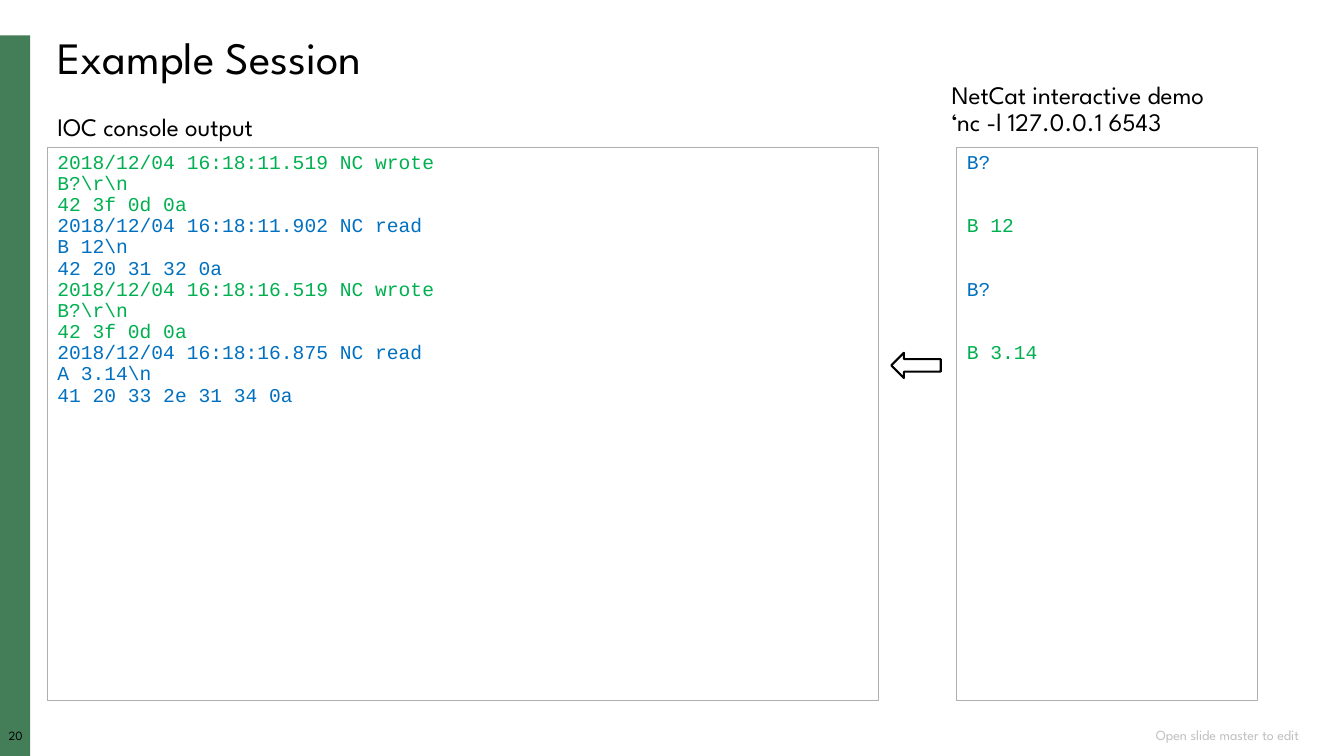
from pptx import Presentation
from pptx.dml.color import RGBColor
from pptx.enum.shapes import MSO_SHAPE
from pptx.enum.text import MSO_ANCHOR, PP_ALIGN
from pptx.util import Inches, Pt

RECTANGLE, LEFT_ARROW = MSO_SHAPE.RECTANGLE, MSO_SHAPE.LEFT_ARROW
TOP, MIDDLE = MSO_ANCHOR.TOP, MSO_ANCHOR.MIDDLE
LEFT, CENTER, RIGHT = PP_ALIGN.LEFT, PP_ALIGN.CENTER, PP_ALIGN.RIGHT

HEADING_FONT, CODE_FONT = "League Spartan", "Courier New"
BLACK, GREY, BORDER = "000000", "BFBFBF", "AEB0AF"
SIDEBAR, GREEN, BLUE = "447E59", "00B050", "0070C0"

LEFT_EDGE = 0.47
PANEL_TOP, PANEL_HEIGHT = 1.46, 5.49
LINE_PITCH = 15.15  # points between console lines


def add_box(preset, left, top, width, height, fill=None, line=None, line_width=0.75):
    shape = slide.shapes.add_shape(
        preset, Inches(left), Inches(top), Inches(width), Inches(height))
    shape.shadow.inherit = False
    if fill:
        shape.fill.solid()
        shape.fill.fore_color.rgb = RGBColor.from_string(fill)
    else:
        shape.fill.background()
    if line:
        shape.line.color.rgb = RGBColor.from_string(line)
        shape.line.width = Pt(line_width)
    else:
        shape.line.fill.background()
    return shape


def write_lines(shape, lines, size, font, align=LEFT, anchor=TOP, gap=0):
    """Fill a shape with (text, colour) lines, gap points apart."""
    frame = shape.text_frame
    frame.word_wrap = True
    frame.vertical_anchor = anchor
    frame.text = "\n".join(text for text, _ in lines)
    for index, (paragraph, (_, colour)) in enumerate(zip(frame.paragraphs, lines)):
        paragraph.alignment = align
        paragraph.line_spacing = 0.9
        paragraph.space_before = Pt(gap if index else 0)
        for run in paragraph.runs:
            run.font.size = Pt(size)
            run.font.name = font
            run.font.color.rgb = RGBColor.from_string(colour)


presentation = Presentation()
presentation.slide_width = Inches(13.33)
presentation.slide_height = Inches(7.5)
slide = presentation.slides.add_slide(presentation.slide_layouts[5])

# Sidebar, page number and footer
add_box(RECTANGLE, 0, 0.35, 0.3, 7.15, fill=SIDEBAR)
page_number = slide.shapes.add_textbox(0, Inches(7.24), Inches(0.31), Inches(0.17))
page_frame = page_number.text_frame
page_frame.margin_left = page_frame.margin_right = 0
page_frame.margin_top = page_frame.margin_bottom = 0
write_lines(page_number, [("20", BLACK)], 9, HEADING_FONT, CENTER)
footer = slide.shapes.add_textbox(Inches(8.76), Inches(7.2), Inches(4.22), Inches(0.2))
write_lines(footer, [("Open slide master to edit", GREY)], 10, HEADING_FONT, RIGHT, MIDDLE)

# Title
title = slide.shapes.title
title.left, title.top = Inches(LEFT_EDGE), Inches(0.3)
title.width, title.height = Inches(12.5), Inches(0.59)
write_lines(title, [("Example Session", BLACK)], 32, HEADING_FONT)

# Panel labels
labels = [
    (LEFT_EDGE, 1.09, 2.6, 0.37, ["IOC console output"]),
    (9.34, 0.77, 3.29, 0.65, ["NetCat interactive demo", "‘nc -l 127.0.0.1 6543"]),
]
for left, top, width, height, texts in labels:
    label = slide.shapes.add_textbox(
        Inches(left), Inches(top), Inches(width), Inches(height))
    write_lines(label, [(text, BLACK) for text in texts], 18, HEADING_FONT)

# Console output: each exchange is a header, the message and its bytes
exchanges = [
    (GREEN, "2018/12/04 16:18:11.519 NC wrote", r"B?\r\n", "42 3f 0d 0a"),
    (BLUE, "2018/12/04 16:18:11.902 NC read", r"B 12\n", "42 20 31 32 0a"),
    (GREEN, "2018/12/04 16:18:16.519 NC wrote", r"B?\r\n", "42 3f 0d 0a"),
    (BLUE, "2018/12/04 16:18:16.875 NC read", r"A 3.14\n", "41 20 33 2e 31 34 0a"),
]
console_lines = [(text, colour) for colour, *texts in exchanges for text in texts]
console = add_box(RECTANGLE, LEFT_EDGE, PANEL_TOP, 8.24, PANEL_HEIGHT, line=BORDER)
write_lines(console, console_lines, 14, CODE_FONT)

# Interactive session: each line stands beside the header of its exchange
session_lines = [("B?", BLUE), ("B 12", GREEN), ("B?", BLUE), ("B 3.14", GREEN)]
session = add_box(RECTANGLE, 9.49, PANEL_TOP, 2.98, PANEL_HEIGHT, line=BORDER)
write_lines(session, session_lines, 14, CODE_FONT, gap=2 * LINE_PITCH)

add_box(LEFT_ARROW, 8.84, 3.5, 0.49, 0.25, line=BLACK, line_width=1.5)

presentation.save("out.pptx")
